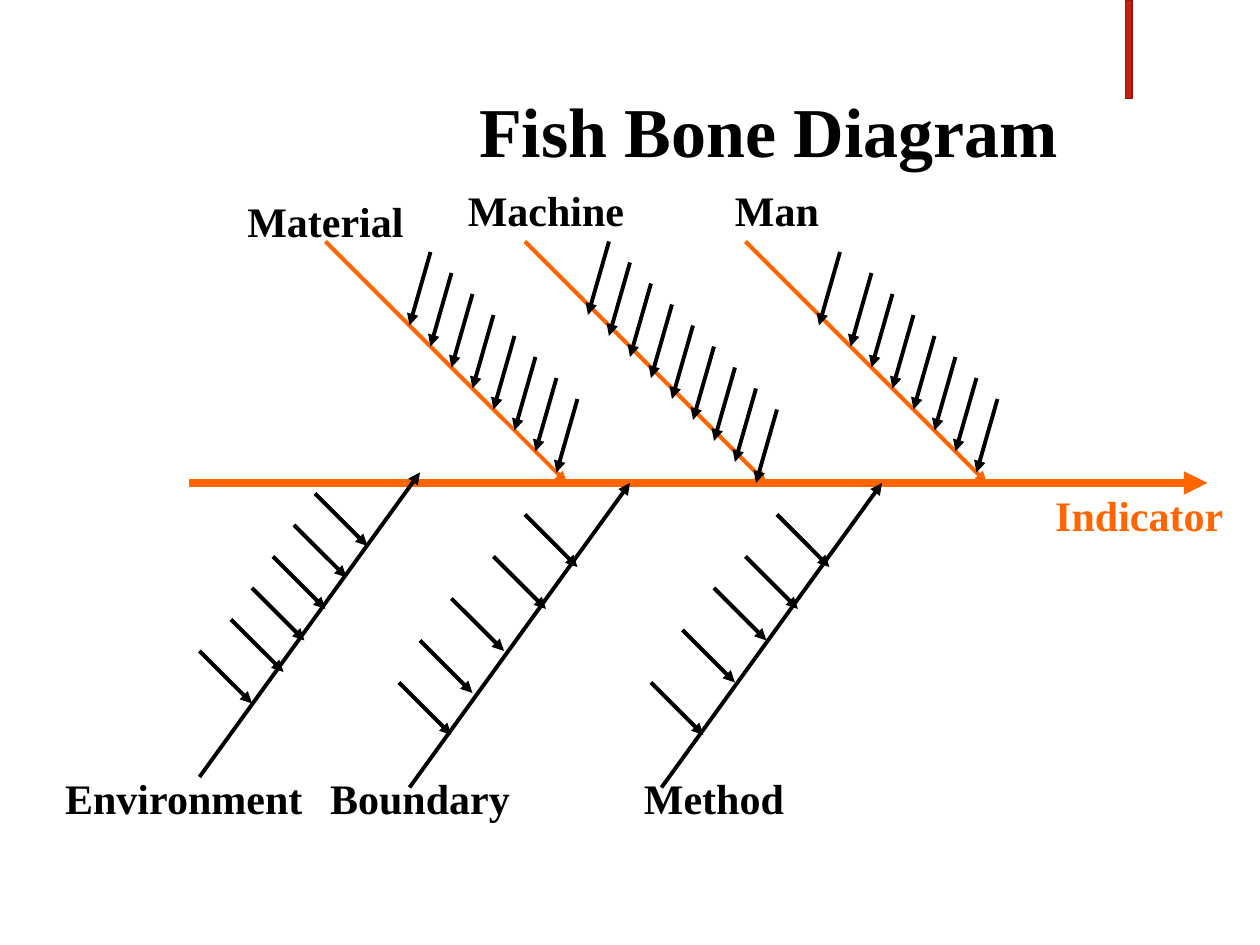
"""Build a fish bone diagram slide with six causes leading to one indicator."""
import lxml.etree
import pptx
import pptx.dml.color
import pptx.enum.shapes
import pptx.enum.text
import pptx.oxml.ns
import pptx.util

PX = 7620
SLIDE_SIZE = (1200, 900)
FONT = "Times New Roman"
COLORS = {"orange": "FF6600", "black": "000000", "bar": "C4220D", "bar_edge": "91190A"}

TITLE = ("Fish Bone Diagram", (397, 77, 670, 92))
INDICATOR = ("Indicator", (970, 460, 230, 60))
BAR = (1072, 0, 6, 94)
SPINE = ((180, 460), (1150, 460))


def diagonal(x, y, count, step=20):
    return [(x + step * i, y + step * i) for i in range(count)]


UPPER = {"bone": (230, 230), "twig": (-20, 70), "color": "orange"}
LOWER = {"bone": (210, -290), "twig": (50, 50), "color": "black"}
CAUSES = [
    ("Material", UPPER, (220, 180, 180, 60), (310, 230), diagonal(410, 240, 8)),
    ("Machine", UPPER, (430, 170, 180, 60), (500, 230), diagonal(580, 230, 9)),
    ("Man", UPPER, (650, 170, 180, 60), (710, 230), [(800, 240)] + diagonal(830, 260, 7)),
    ("Environment", LOWER, (40, 730, 270, 60), (190, 740),
     [(300, 470), (280, 500), (260, 530), (240, 560), (220, 590), (190, 620)]),
    ("Boundary", LOWER, (300, 730, 200, 60), (390, 750),
     [(500, 490), (470, 530), (430, 570), (400, 610), (380, 650)]),
    ("Method", LOWER, (590, 730, 180, 60), (630, 750),
     [(740, 490), (710, 530), (680, 560), (650, 600), (620, 650)]),
]


def emu(*lengths):
    return [pptx.util.Emu(length * PX) for length in lengths]


def rgb(name):
    return pptx.dml.color.RGBColor.from_string(COLORS[name])


def apply(target, values):
    for attribute, value in values.items():
        setattr(target, attribute, value)


def add_arrow(slide, start, end, color, width=2.25):
    arrow = slide.shapes.add_connector(
        pptx.enum.shapes.MSO_CONNECTOR.STRAIGHT, *emu(*start, *end))
    arrow.line.width = pptx.util.Pt(width)
    arrow.line.color.rgb = rgb(color)
    qn = pptx.oxml.ns.qn
    properties = arrow.element.spPr
    lxml.etree.SubElement(properties.find(qn("a:ln")), qn("a:tailEnd"), type="triangle")
    lxml.etree.SubElement(properties, qn("a:effectLst"))


def write(box, text, size, color):
    frame = box.text_frame
    frame.text = text
    apply(frame, {
        "word_wrap": True,
        "auto_size": pptx.enum.text.MSO_AUTO_SIZE.SHAPE_TO_FIT_TEXT,
        "vertical_anchor": pptx.enum.text.MSO_ANCHOR.TOP,
    })
    paragraph = frame.paragraphs[0]
    paragraph.alignment = pptx.enum.text.PP_ALIGN.CENTER
    font = paragraph.runs[0].font
    apply(font, {"name": FONT, "size": pptx.util.Pt(size), "bold": True})
    font.color.rgb = rgb(color)


def add_label(slide, text, place, color="black"):
    write(slide.shapes.add_textbox(*emu(*place)), text, 24, color)


def add_title(slide):
    text, place = TITLE
    title = slide.shapes.title
    apply(title, dict(zip(("left", "top", "width", "height"), emu(*place))))
    write(title, text, 40, "black")


def add_bar(slide):
    bar = slide.shapes.add_shape(pptx.enum.shapes.MSO_SHAPE.RECTANGLE, *emu(*BAR))
    bar.shadow.inherit = False
    bar.fill.solid()
    bar.fill.fore_color.rgb = rgb("bar")
    bar.line.color.rgb = rgb("bar_edge")
    bar.line.width = pptx.util.Pt(1)


def shifted(point, offset):
    return point[0] + offset[0], point[1] + offset[1]


def main():
    deck = pptx.Presentation()
    deck.slide_width, deck.slide_height = emu(*SLIDE_SIZE)
    slide = deck.slides.add_slide(deck.slide_layouts[5])
    add_bar(slide)
    add_title(slide)
    add_arrow(slide, *SPINE, "orange", 4.5)
    for cause, side, place, bone, twigs in CAUSES:
        add_arrow(slide, bone, shifted(bone, side["bone"]), side["color"])
        add_label(slide, cause, place)
        for twig in twigs:
            add_arrow(slide, twig, shifted(twig, side["twig"]), "black")
    add_label(slide, *INDICATOR, "orange")
    deck.save("out.pptx")


if __name__ == "__main__":
    main()
